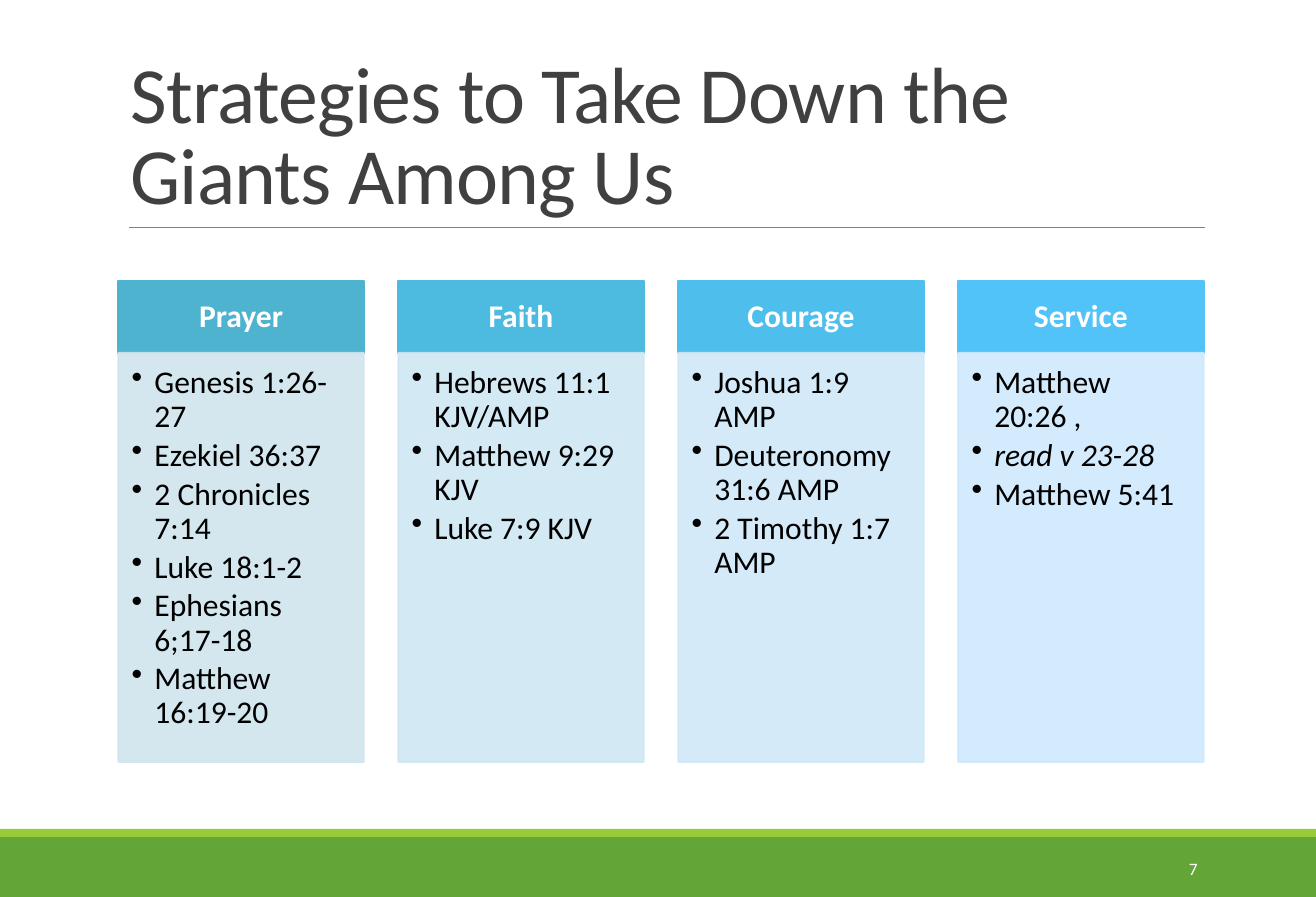
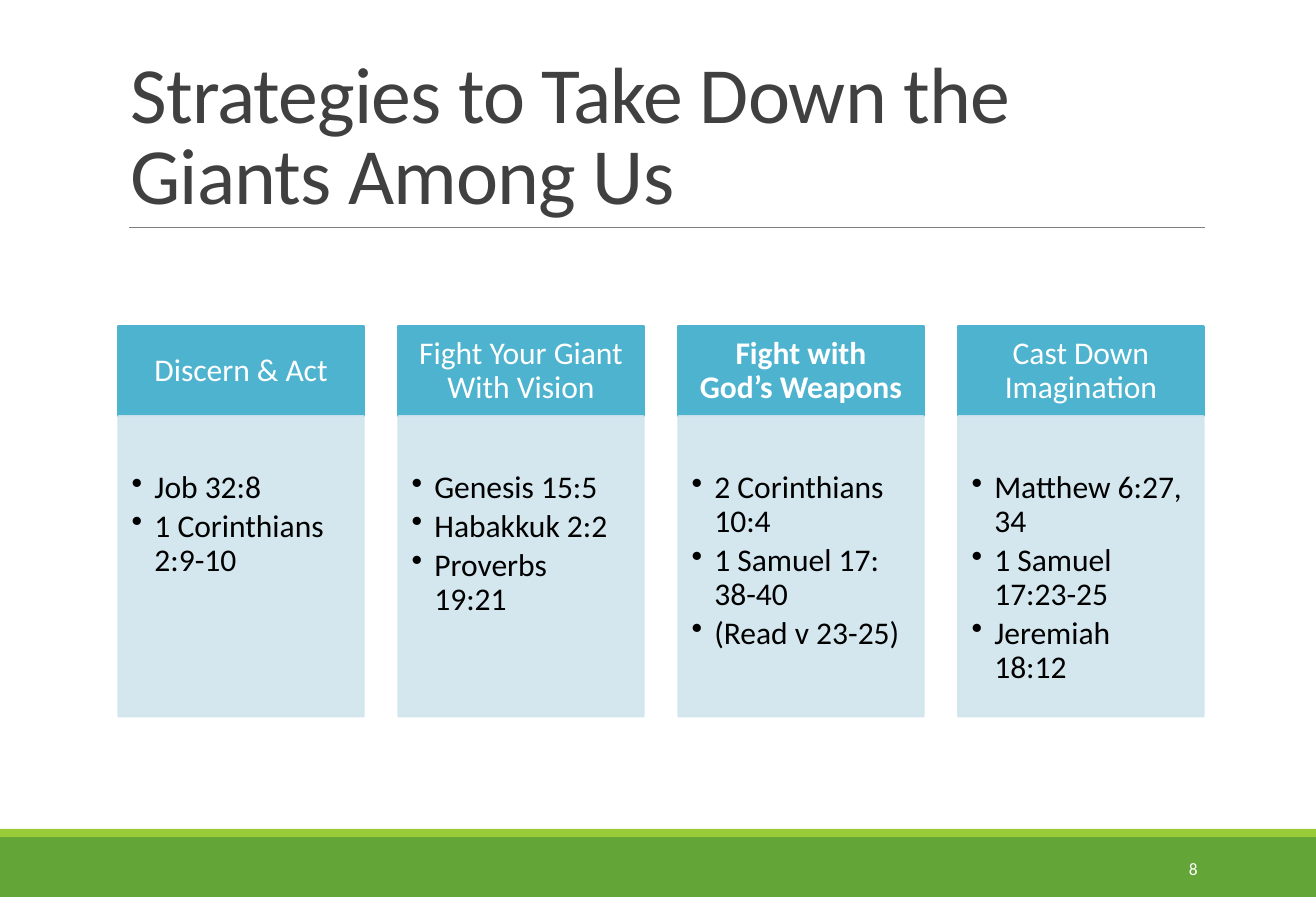
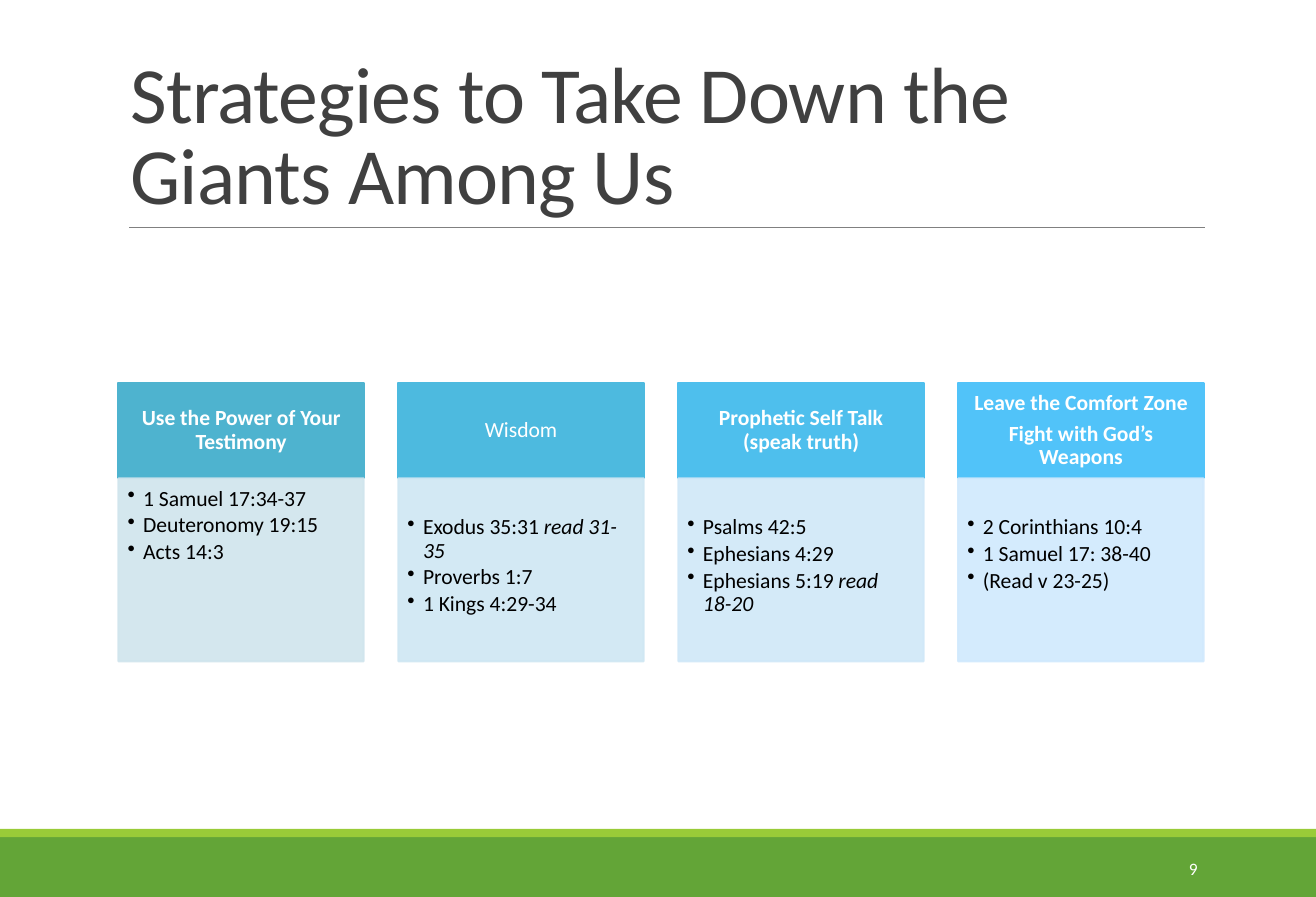
from dataclasses import dataclass

from pptx import Presentation
from pptx.dml.color import RGBColor
from pptx.enum.shapes import MSO_CONNECTOR, MSO_SHAPE
from pptx.enum.text import MSO_ANCHOR, MSO_AUTO_SIZE, PP_ALIGN
from pptx.oxml.ns import qn
from pptx.util import Inches, Pt

RECTANGLE = MSO_SHAPE.RECTANGLE
STRAIGHT = MSO_CONNECTOR.STRAIGHT
TOP, MIDDLE, BOTTOM = MSO_ANCHOR.TOP, MSO_ANCHOR.MIDDLE, MSO_ANCHOR.BOTTOM
LEFT, CENTER, RIGHT = PP_ALIGN.LEFT, PP_ALIGN.CENTER, PP_ALIGN.RIGHT
NO_AUTOFIT = MSO_AUTO_SIZE.NONE

FONT = "Calibri"
WHITE, BLACK, TITLE_GRAY, RULE_GRAY = "FFFFFF", "000000", "404040", "808080"
GREEN, LIME = "63A537", "99CB38"
BLUES = [("4EB3CF", "D0E5ED"), ("4DBADF", "CFE7F3"),
         ("4EBFED", "D0E8F8"), ("51C3F9", "D0E9FD")]
TITLE = "Strategies to Take Down the Giants Among Us"
FIRST_NUMBER = 7
COLUMN_LEFT, COLUMN_WIDTH, COLUMN_STEP = 0.99, 2.05, 2.34


@dataclass
class Column:
    """A heading with its verses; a verse is text or a (plain, italic) pair."""
    heading: list
    verses: list
    bold: bool = True
    lowered: bool = True


@dataclass
class Panel:
    """The columns of one slide with their measures and colours."""
    top: float
    heading_height: float
    body_height: float
    size: int
    colors: list
    columns: list


PANELS = [
    Panel(2.35, 0.6, 3.42, 19, BLUES, [
        Column(["Prayer"], ["Genesis 1:26-27", "Ezekiel 36:37", "2 Chronicles 7:14",
                            "Luke 18:1-2", "Ephesians 6;17-18", "Matthew 16:19-20"],
               lowered=False),
        Column(["Faith"], ["Hebrews 11:1 KJV/AMP", "Matthew 9:29 KJV", "Luke 7:9 KJV"],
               lowered=False),
        Column(["Courage"], ["Joshua 1:9 AMP", "Deuteronomy 31:6 AMP", "2 Timothy 1:7 AMP"],
               lowered=False),
        Column(["Service"], ["Matthew 20:26 ,", ("", "read v 23-28"), "Matthew 5:41"],
               lowered=False),
    ]),
    Panel(2.73, 0.75, 2.51, 19, BLUES[:1] * 4, [
        Column(["Discern & Act"], ["Job 32:8", "1 Corinthians 2:9-10"], bold=False),
        Column(["Fight Your Giant With Vision"],
               ["Genesis 15:5", "Habakkuk 2:2", "Proverbs 19:21"], bold=False),
        Column(["Fight with God’s Weapons"],
               ["2 Corinthians 10:4", "1 Samuel 17: 38-40", "(Read v 23-25)"]),
        Column(["Cast Down Imagination"],
               ["Matthew 6:27, 34", "1 Samuel 17:23-25", "Jeremiah 18:12"], bold=False),
    ]),
    Panel(3.2, 0.8, 1.53, 13, BLUES, [
        Column(["Use the Power of Your Testimony"],
               ["1 Samuel 17:34-37", "Deuteronomy 19:15", "Acts 14:3"], lowered=False),
        Column(["Wisdom"], [("Exodus 35:31 ", "read 31-35"), "Proverbs 1:7",
                            "1 Kings 4:29-34"], bold=False),
        Column(["Prophetic Self Talk (speak truth)"],
               ["Psalms 42:5", "Ephesians 4:29", ("Ephesians 5:19 ", "read 18-20")]),
        Column(["Leave the Comfort Zone", "Fight with God’s Weapons"],
               ["2 Corinthians 10:4", "1 Samuel 17: 38-40", "(Read v 23-25)"]),
    ]),
]


def rgb(color):
    """Turn a hex string into a colour."""
    return RGBColor.from_string(color)


def add_bullet(paragraph, indent):
    """Give a paragraph a hanging round bullet."""
    properties = paragraph._p.get_or_add_pPr()
    properties.set("marL", str(Inches(indent)))
    properties.set("indent", str(-Inches(indent)))
    bullet = properties.makeelement(qn("a:buChar"), {"char": "•"})
    properties.append(bullet)


def write_text(shape, paragraphs, size, color, align=LEFT, anchor=TOP, bold=False,
               line_spacing=1.0, space_after=0, tracking=0, indent=0, insets=None):
    """Write paragraphs of text or (plain, italic) pairs into a shape."""
    frame = shape.text_frame
    frame.word_wrap = True
    frame.auto_size = NO_AUTOFIT
    frame.vertical_anchor = anchor
    if insets:
        (frame.margin_left, frame.margin_top,
         frame.margin_right, frame.margin_bottom) = map(Pt, insets)
    for index, parts in enumerate(paragraphs):
        paragraph = frame.add_paragraph() if index else frame.paragraphs[0]
        paragraph.alignment = align
        paragraph.line_spacing = line_spacing
        paragraph.space_before = Pt(0)
        paragraph.space_after = Pt(space_after)
        if indent:
            add_bullet(paragraph, indent)
        plain, italic = (parts, "") if isinstance(parts, str) else parts
        for text, slanted in ((plain, False), (italic, True)):
            if text:
                run = paragraph.add_run()
                run.text = text
                font = run.font
                font.name, font.size, font.bold, font.italic = FONT, Pt(size), bold, slanted
                font.color.rgb = rgb(color)
                if tracking:
                    run._r.get_or_add_rPr().set("spc", str(int(tracking * 100)))


def add_box(slide, left, top, width, height, fill, outlined=False, opacity=100):
    """Add a filled rectangle, optionally outlined and translucent."""
    box = slide.shapes.add_shape(RECTANGLE, Inches(left), Inches(top),
                                 Inches(width), Inches(height))
    box.shadow.inherit = False
    box.fill.solid()
    box.fill.fore_color.rgb = rgb(fill)
    if outlined:
        box.line.color.rgb = rgb(fill)
        box.line.width = Pt(1.25)
    else:
        box.line.fill.background()
    if opacity < 100:
        for color in list(box.element.spPr.iter(qn("a:srgbClr"))):
            alpha = color.makeelement(qn("a:alpha"), {"val": str(opacity * 1000)})
            color.append(alpha)
    return box


def add_rule(slide, left, right, y):
    """Add the thin line below the title."""
    rule = slide.shapes.add_connector(STRAIGHT, Inches(left), Inches(y),
                                      Inches(right), Inches(y))
    rule.line.color.rgb = rgb(RULE_GRAY)
    rule.line.width = Pt(0.5)
    properties = rule.element.spPr
    properties.append(properties.makeelement(qn("a:effectLst"), {}))
    return rule


def decorate_layout(layout, slide):
    """Draw the shared bands and title rule, then move them to the layout."""
    shared = [add_box(slide, 0, 7, 11, 0.5, GREEN),
              add_box(slide, 0, 6.93, 11, 0.07, LIME),
              add_rule(slide, 1.08, 10.07, 1.9)]
    for shape in shared:
        layout.shapes.element.append(shape.element)


def add_title(slide):
    """Place and format the title."""
    title = slide.shapes.title
    title.left, title.top, title.width, title.height = map(Inches, (0.99, 0.31, 9.07, 1.59))
    write_text(title, [TITLE], 48, TITLE_GRAY, anchor=BOTTOM,
               line_spacing=0.85, tracking=-0.5)


def add_number(slide, number):
    """Write the slide number on the green band."""
    box = slide.shapes.add_textbox(Inches(8.93), Inches(7.06), Inches(1.18), Inches(0.4))
    write_text(box, [str(number)], 10.5, WHITE, align=RIGHT, anchor=MIDDLE)


def add_panel(slide, panel):
    """Add a row of columns, each a heading above a body of verses."""
    size = panel.size
    side, edge = 0.56 * size, 0.32 * size
    body_top = panel.top + panel.heading_height
    for index, (column, colors) in enumerate(zip(panel.columns, panel.colors)):
        left = COLUMN_LEFT + index * COLUMN_STEP
        heading = add_box(slide, left, panel.top, COLUMN_WIDTH, panel.heading_height,
                          colors[0], outlined=True)
        write_text(heading, column.heading, size, WHITE, align=CENTER, anchor=MIDDLE,
                   bold=column.bold, line_spacing=0.9, space_after=0.35 * size,
                   insets=(side, edge, side, edge))
        body = add_box(slide, left, body_top, COLUMN_WIDTH, panel.body_height,
                       colors[1], outlined=True, opacity=90)
        inset_top = (1.75 if column.lowered else 0.42) * size
        write_text(body, column.verses, size, BLACK, line_spacing=0.9,
                   space_after=0.15 * size, indent=size / 100,
                   insets=(0.42 * size, inset_top, side, 2 * edge))


def main():
    """Build and save the presentation."""
    presentation = Presentation()
    presentation.slide_width, presentation.slide_height = Inches(11), Inches(7.5)
    layout = presentation.slide_layouts[5]
    for number, panel in enumerate(PANELS, FIRST_NUMBER):
        slide = presentation.slides.add_slide(layout)
        if number == FIRST_NUMBER:
            decorate_layout(layout, slide)
        add_title(slide)
        add_number(slide, number)
        add_panel(slide, panel)
    presentation.save("out.pptx")


if __name__ == "__main__":
    main()
